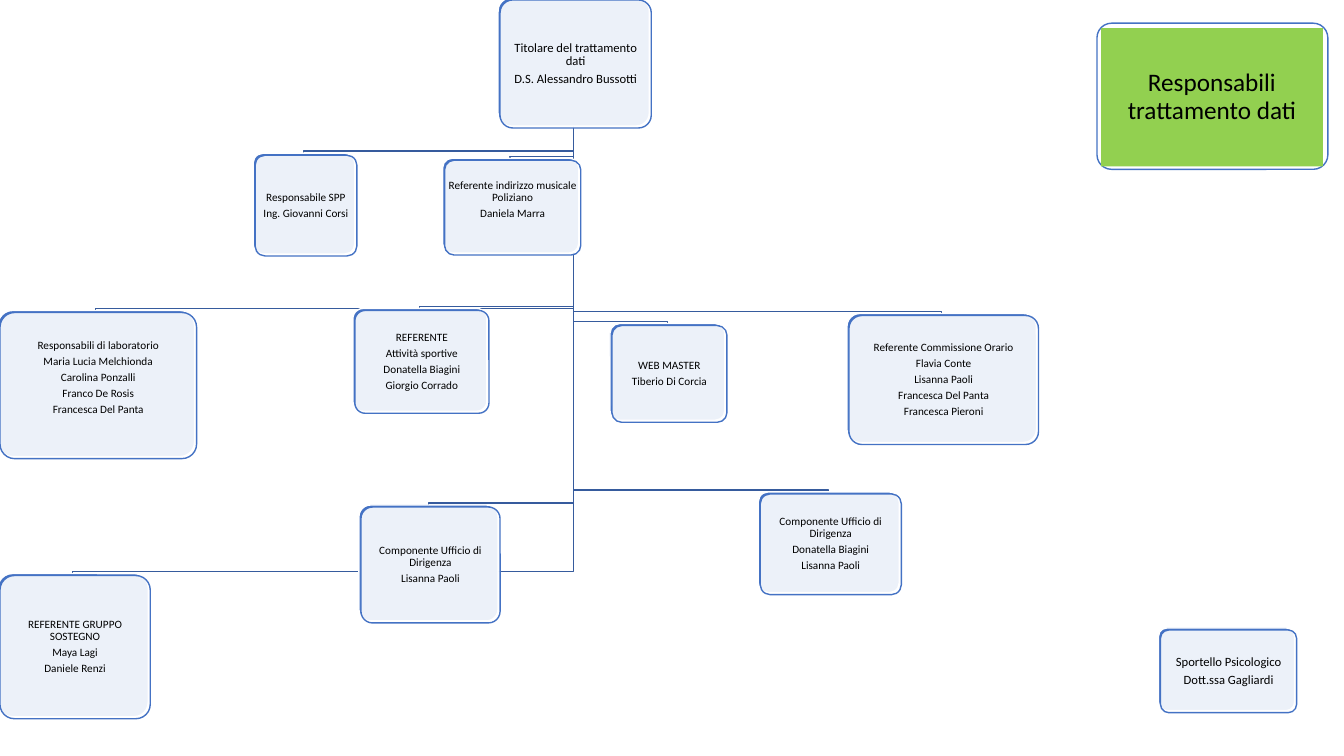
from lxml.etree import SubElement
from pptx import Presentation
from pptx.dml.color import RGBColor
from pptx.enum.shapes import MSO_SHAPE
from pptx.enum.text import MSO_ANCHOR, MSO_AUTO_SIZE, PP_ALIGN
from pptx.oxml.ns import qn
from pptx.util import Pt

PX = 9144  # EMU per px, 100 px to the inch
SHIFT = 2  # offset of a card from the plate behind it
BLUE = RGBColor(0x44, 0x72, 0xC4)
NAVY = RGBColor(0x36, 0x5B, 0x9D)
GREEN = RGBColor(0x92, 0xD0, 0x50)
WHITE = RGBColor(255, 255, 255)
BLACK = RGBColor(0, 0, 0)

# plate box, text size, extra space under the text, lines
ROOT = ((494, -2, 150, 127), 9, 0,
        ["Titolare del trattamento dati", "D.S. Alessandro Bussotti"])
STAFF = [
    ((251, 152, 101, 100), 8, 0, ["Responsabile SPP", "Ing. Giovanni Corsi"]),
    ((439, 157, 135, 94), 8, 16,
     ["Referente indirizzo musicale Poliziano", "Daniela Marra"]),
    ((-2, 308, 195, 145), 8, 16,
     ["Responsabili di laboratorio", "Maria Lucia Melchionda",
      "Carolina Ponzalli", "Franco De Rosis", "Francesca Del Panta"]),
    ((350, 306, 133, 102), 8, 0,
     ["REFERENTE", "Attività sportive", "Donatella Biagini",
      "Giorgio Corrado"]),
    ((-2, 569, 149, 142), 8, 0,
     ["REFERENTE GRUPPO SOSTEGNO", "Maya Lagi", "Daniele Renzi"]),
    ((356, 501, 138, 115), 8, 0,
     ["Componente Ufficio di Dirigenza", "Lisanna Paoli"]),
    ((752, 488, 140, 100), 8, 0,
     ["Componente Ufficio di Dirigenza", "Donatella Biagini",
      "Lisanna Paoli"]),
    ((605, 321, 114, 96), 8, 0, ["WEB MASTER", "Tiberio Di Corcia"]),
    ((840, 311, 188, 128), 8, 0,
     ["Referente Commissione Orario", "Flavia Conte", "Lisanna Paoli",
      "Francesca Del Panta", "Francesca Pieroni"]),
]
DESK = ((1149, 623, 135, 82), 9, 0,
        ["Sportello Psicologico", "Dott.ssa Gagliardi"])


def add_plate(slide, box, fill, line, alpha=None):
    """Add a rounded box; alpha is its opacity in percent."""
    plate = slide.shapes.add_shape(MSO_SHAPE.ROUNDED_RECTANGLE,
                                   *(n * PX for n in box))
    plate.adjustments[0] = 0.1
    plate.shadow.inherit = False
    plate.fill.solid()
    plate.fill.fore_color.rgb = fill
    plate.line.color.rgb = line
    plate.line.width = Pt(1)
    if alpha:
        color = plate._element.spPr.find(qn("a:solidFill"))[0]
        SubElement(color, qn("a:alpha"), val=str(alpha * 1000))
    return plate


def write(shape, lines, size, inset=0, below=0):
    frame = shape.text_frame
    frame.word_wrap = True
    frame.auto_size = MSO_AUTO_SIZE.NONE
    frame.vertical_anchor = MSO_ANCHOR.MIDDLE
    frame.margin_left = frame.margin_right = frame.margin_top = inset * PX
    frame.margin_bottom = (inset + below) * PX
    for i, line in enumerate(lines):
        para = frame.add_paragraph() if i else frame.paragraphs[0]
        para.alignment = PP_ALIGN.CENTER
        para.line_spacing = 0.9
        para.space_before = Pt(0)
        para.space_after = Pt(size * 0.35)
        run = para.add_run()
        run.text = line
        run.font.name = "Calibri"
        run.font.size = Pt(size)
        run.font.color.rgb = BLACK


def add_card(slide, box, size, below, lines):
    """Add a blue plate with a pale text card shifted over it."""
    x, y, w, h = box
    add_plate(slide, box, BLUE, WHITE)
    card = add_plate(slide, (x + SHIFT, y + SHIFT, w, h), WHITE, BLUE, 90)
    write(card, lines, size, below=below)


def add_link(slide, box):
    """Draw the elbow from the foot of the root to the top of a box."""
    x, y, w, h = ROOT[0]
    trunk, foot = x + w // 2, y + h
    end, top = box[0] + box[2] // 2, box[1]
    path = slide.shapes.build_freeform(trunk, foot, scale=PX)
    path.add_line_segments([(trunk, top - 2), (end, top - 2), (end, top)],
                           close=False)
    link = path.convert_to_shape()
    link.shadow.inherit = False
    link.fill.background()
    link.line.color.rgb = NAVY
    link.line.width = Pt(1)


def add_title(slide, text):
    add_plate(slide, (1088, 23, 229, 145), WHITE, BLUE, 90)
    title = slide.shapes.title
    title.left, title.top = 1092 * PX, 28 * PX
    title.width, title.height = 220 * PX, 137 * PX
    title.fill.solid()
    title.fill.fore_color.rgb = GREEN
    write(title, [text], 18, inset=7)
    slide.shapes._spTree.append(title._element)  # bring to front


def main():
    deck = Presentation()
    deck.slide_width, deck.slide_height = 1333 * PX, 750 * PX
    slide = deck.slides.add_slide(deck.slide_layouts[5])
    for box, *_ in STAFF:
        add_link(slide, box)
    for card in [ROOT, *STAFF, DESK]:
        add_card(slide, *card)
    add_title(slide, "Responsabili trattamento dati")
    deck.save("out.pptx")


if __name__ == "__main__":
    main()
